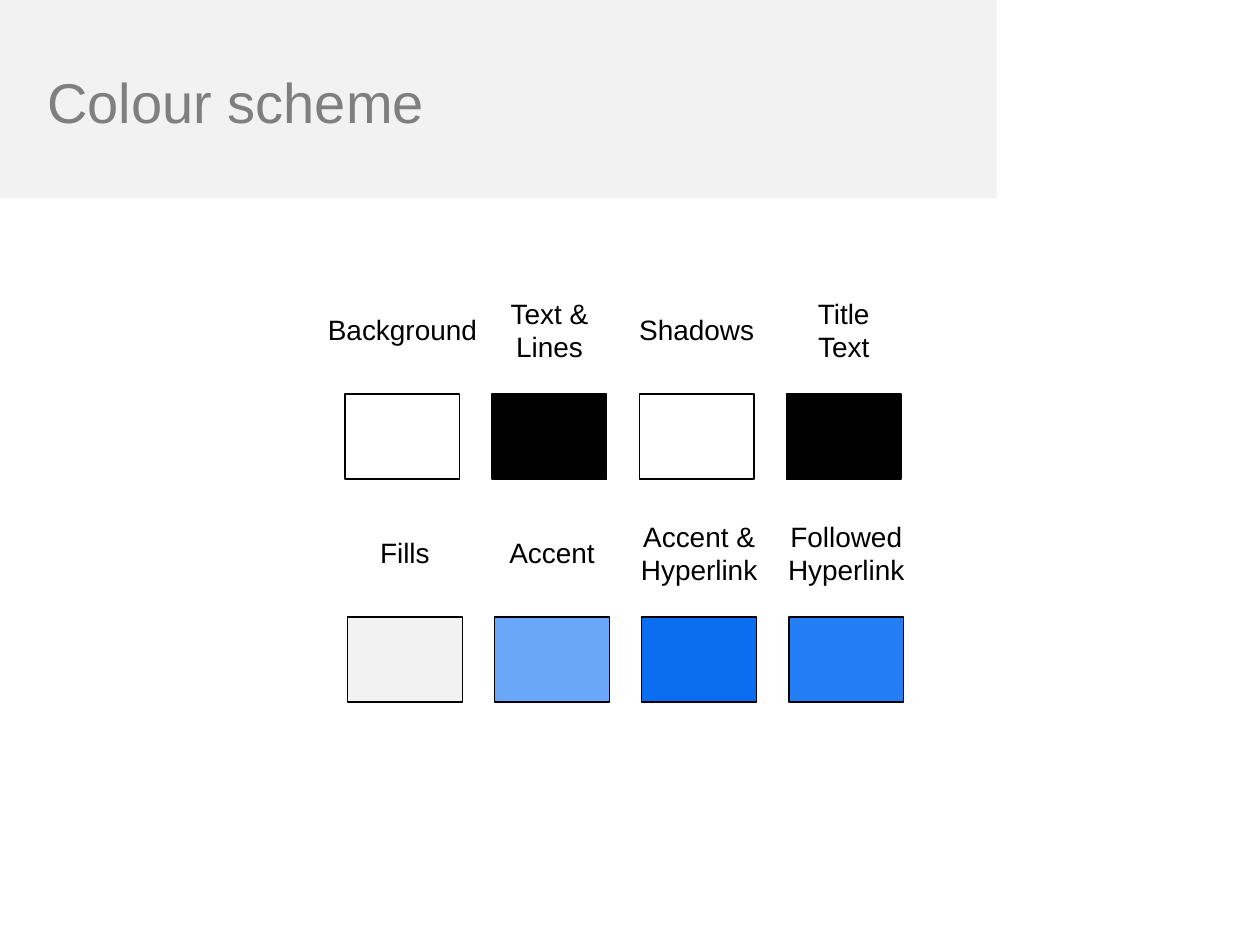
from pptx import Presentation
from pptx import util as u
from pptx.dml.color import RGBColor
from pptx.enum import shapes, text

W, H = 10, 7.5
COL, ROW = W / 100, H / 100
FONT = "Arial"
COLORS = {
    "white": "FFFFFF", "black": "000000", "band": "F2F2F2", "title": "7F7F7F",
    "light": "6BA7F8", "strong": "0B6DEF", "followed": "237DF5",
}
ROWS = [
    [("Background", "white"), ("Text &\nLines", "black"),
     ("Shadows", "white"), ("Title\vText", "black")],
    [("Fills", "band"), ("Accent", "light"),
     ("Accent &\nHyperlink", "strong"), ("Followed\nHyperlink", "followed")],
]


def rgb(name):
    """Return the named colour."""
    return RGBColor.from_string(COLORS[name])


def add_rect(s, box, fill, line=None):
    """Draw a flat rectangle in box (left, top, width, height in inches)."""
    sp = s.shapes.add_shape(shapes.MSO_SHAPE.RECTANGLE, *map(u.Inches, box))
    sp.shadow.inherit = False
    sp.fill.solid()
    sp.fill.fore_color.rgb = rgb(fill)
    if line:
        sp.line.color.rgb = rgb(line)
        sp.line.width = u.Pt(0.75)
    else:
        sp.line.fill.background()


def add_text(s, box, words, size, color, align, wrap):
    """Write vertically centred text in box."""
    tf = s.shapes.add_textbox(*map(u.Inches, box)).text_frame
    tf.word_wrap = wrap
    tf.vertical_anchor = text.MSO_ANCHOR.MIDDLE
    tf.text = words
    for p in tf.paragraphs:
        p.alignment = align
        for r in p.runs:
            r.font.name = FONT
            r.font.size = u.Pt(size)
            r.font.color.rgb = rgb(color)


def add_header(s, box, title):
    """Place the title band and its heading."""
    x, y, w, h = box
    add_rect(s, box, "band")
    add_text(s, (x + 0.035 * w, y + 0.19 * h, 0.95 * w, 0.64 * h), title, 32,
             "title", text.PP_ALIGN.LEFT, True)


def add_swatch_row(s, box, swatches):
    """Place one row of labelled swatches in equal columns of box."""
    x, y, w, h = box
    step = w / len(swatches)
    for i, (label, fill) in enumerate(swatches):
        left = x + i * step
        add_rect(s, (left + 0.11 * step, y + 0.55 * h, 0.78 * step, 0.45 * h),
                 fill, "black")
        add_text(s, (left - 0.15 * step, y, 1.3 * step, 0.42 * h), label, 16,
                 "black", text.PP_ALIGN.CENTER, False)


def main():
    """Build and save the colour scheme slide."""
    prs = Presentation()
    prs.slide_width, prs.slide_height = u.Inches(W), u.Inches(H)
    s = prs.slides.add_slide(prs.slide_layouts[6])
    add_header(s, (0, 0, 79.1 * COL, 21 * ROW), "Colour scheme")
    for i, swatches in enumerate(ROWS):
        box = ((26.1 + 0.2 * i) * COL, (30.7 + 23.6 * i) * ROW,
               46.7 * COL, 20 * ROW)
        add_swatch_row(s, box, swatches)
    prs.save("out.pptx")


if __name__ == "__main__":
    main()
